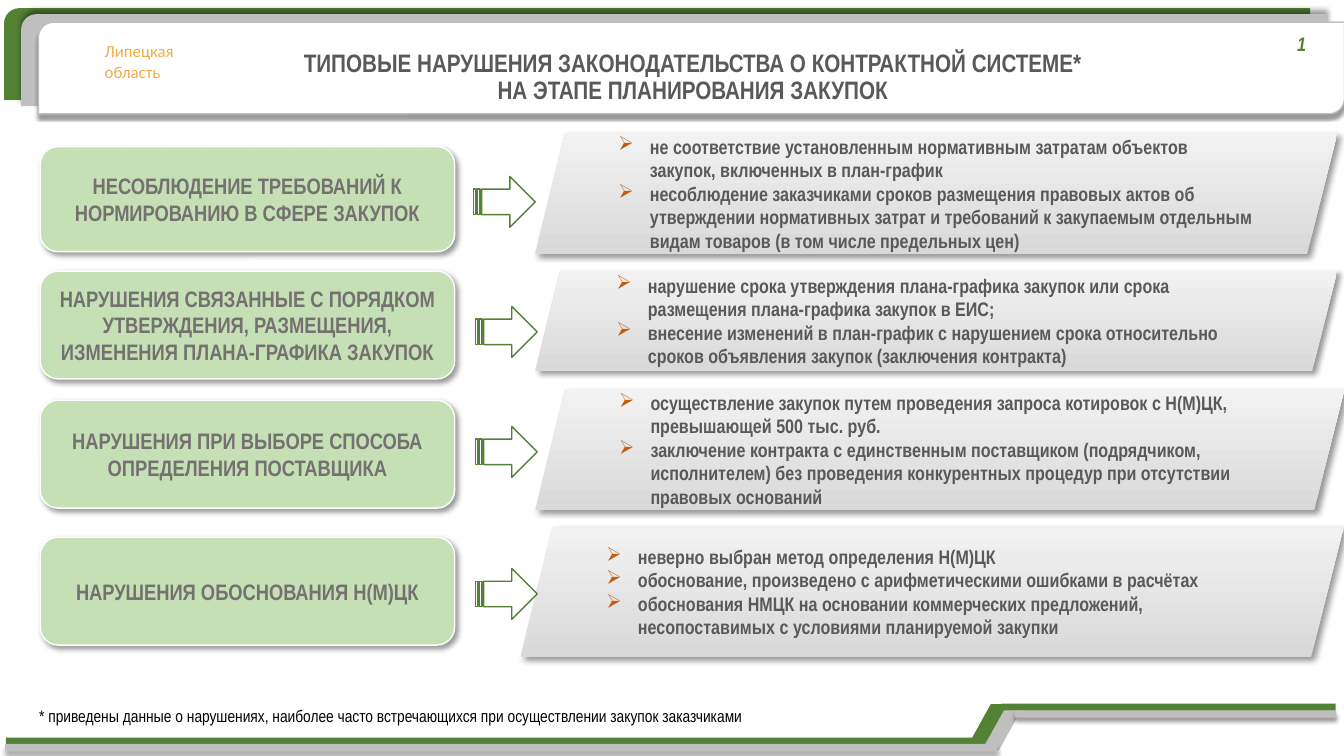
from dataclasses import dataclass, field
from typing import Any

from lxml import etree
from pptx import Presentation
from pptx import util as u
from pptx.dml.color import RGBColor
from pptx.enum import shapes, text
from pptx.oxml.ns import qn


@dataclass(frozen=True)
class Theme:
    green: str = "548235"
    silver: str = "BFBFBF"
    white: str = "FFFFFF"
    black: str = "000000"
    pale_green: str = "C5E0B4"
    orange: str = "F2AC44"
    bullet: str = "C55A11"
    ink: str = "595959"
    topic_ink: str = "767171"
    panel_bottom: str = "D9D9D9"
    panel_top: str = "F2F2F2"
    narrow: str = "Arial Narrow"
    plain: str = "Calibri"
    title_size: int = 18
    topic_size: int = 16
    body_size: int = 14
    small_size: int = 12


THEME = Theme()
KIND = shapes.MSO_SHAPE
ALIGN = text.PP_ALIGN
ANCHOR = text.MSO_ANCHOR
PANEL_INSET = 2.7
BULLET_INDENT = 22.5


@dataclass(frozen=True)
class Frame:
    left: float
    top: float
    width: float
    height: float

    def lengths(self) -> list[int]:
        return [u.Pt(v) for v in (self.left, self.top, self.width, self.height)]


@dataclass(frozen=True)
class Shadow:
    blur: float
    distance: float
    angle: int


@dataclass(frozen=True)
class Style:
    size: int
    color: str
    font: str = THEME.narrow
    bold: bool = False
    italic: bool = False


@dataclass(frozen=True)
class Layout:
    """Text frame and paragraph settings."""
    frame: dict[str, Any] = field(default_factory=dict)
    para: dict[str, Any] = field(default_factory=dict)
    bulleted: bool = False


@dataclass(frozen=True)
class Violation:
    topic: str
    topic_frame: Frame
    panel_frame: Frame
    arrow_left: float
    arrow_top: float
    details: tuple[str, ...]


CAST = Shadow(4, 3, 45)
VIOLATIONS = (
    Violation(
        "НЕСОБЛЮДЕНИЕ ТРЕБОВАНИЙ К НОРМИРОВАНИЮ В СФЕРЕ ЗАКУПОК",
        Frame(28.8, 104.8, 296, 75), Frame(382.3, 95, 573, 86.4), 338.4, 126,
        ("не соответствие установленным нормативным затратам объектов закупок, включенных в план-график",
         "несоблюдение заказчиками сроков размещения правовых актов об утверждении нормативных затрат "
         "и требований к закупаемым отдельным видам товаров (в том числе предельных цен)")),
    Violation(
        "НАРУШЕНИЯ СВЯЗАННЫЕ С ПОРЯДКОМ УТВЕРЖДЕНИЯ, РАЗМЕЩЕНИЯ, ИЗМЕНЕНИЯ ПЛАНА-ГРАФИКА ЗАКУПОК",
        Frame(28.8, 193.7, 296, 77), Frame(382.3, 193, 573, 72), 339.8, 218.9,
        ("нарушение срока утверждения плана-графика закупок или срока размещения плана-графика закупок в ЕИС;",
         "внесение изменений в план-график с нарушением срока относительно "
         "сроков объявления закупок (заключения контракта)")),
    Violation(
        "НАРУШЕНИЯ ПРИ ВЫБОРЕ СПОСОБА ОПРЕДЕЛЕНИЯ ПОСТАВЩИКА",
        Frame(28.8, 286, 296, 77), Frame(382.3, 277.9, 578, 86.4), 339.8, 304.6,
        ("осуществление закупок путем проведения запроса котировок с Н(М)ЦК, превышающей 500 тыс. руб.",
         "заключение контракта с единственным поставщиком (подрядчиком, исполнителем) "
         "без проведения конкурентных процедур при отсутствии правовых оснований")),
    Violation(
        "НАРУШЕНИЯ ОБОСНОВАНИЯ Н(М)ЦК",
        Frame(28.8, 383.8, 296, 77), Frame(371.8, 376.2, 588, 93), 339.8, 406.1,
        ("неверно выбран метод определения Н(М)ЦК",
         "обоснование, произведено с арифметическими ошибками в расчётах",
         "обоснования НМЦК на основании коммерческих предложений, "
         "несопоставимых с условиями планируемой закупки")),
)


def assign(target: Any, values: dict[str, Any]) -> None:
    for name, value in values.items():
        setattr(target, name, value)


def paint(shape: Any, fill: str | tuple[str, str], line: str | None = None,
          shadow: Shadow | None = None) -> None:
    shape.shadow.inherit = False
    if isinstance(fill, tuple):
        shape.fill.gradient()
        shape.fill.gradient_angle = 90
        for stop, color in zip(shape.fill.gradient_stops, fill):
            stop.color.rgb = RGBColor.from_string(color)
    else:
        shape.fill.solid()
        shape.fill.fore_color.rgb = RGBColor.from_string(fill)
    if line:
        shape.line.color.rgb = RGBColor.from_string(line)
        shape.line.width = u.Pt(1)
    else:
        shape.line.fill.background()
    if shadow:
        effects = shape._element.spPr.find(qn("a:effectLst"))
        outer = etree.SubElement(effects, qn("a:outerShdw"), blurRad=str(u.Pt(shadow.blur)),
                                 dist=str(u.Pt(shadow.distance)), dir=str(shadow.angle * 60000),
                                 algn="ctr", rotWithShape="0")
        color = etree.SubElement(outer, qn("a:srgbClr"), val=THEME.black)
        etree.SubElement(color, qn("a:alpha"), val="40000")


def add_block(page: Any, kind: Any, frame: Frame, fill: str | tuple[str, str],
              line: str | None = None, shadow: Shadow | None = None) -> Any:
    block = page.shapes.add_shape(kind, *frame.lengths())
    paint(block, fill, line, shadow)
    return block


def add_bullet(para: Any) -> None:
    props = para._p.get_or_add_pPr()
    props.set("marL", str(u.Pt(BULLET_INDENT)))
    props.set("indent", str(u.Pt(-BULLET_INDENT)))
    color = etree.SubElement(props, qn("a:buClr"))
    etree.SubElement(color, qn("a:srgbClr"), val=THEME.bullet)
    etree.SubElement(props, qn("a:buChar"), char="➢")


def write(box: Any, lines: tuple[str, ...], style: Style, layout: Layout = Layout()) -> None:
    frame = box.text_frame
    assign(frame, {"word_wrap": True, **layout.frame})
    for index, line in enumerate(lines):
        para = frame.add_paragraph() if index else frame.paragraphs[0]
        if layout.bulleted:
            add_bullet(para)
        assign(para, layout.para)
        span = para.add_run()
        span.text = line
        assign(span.font, {"size": u.Pt(style.size), "name": style.font,
                           "bold": style.bold, "italic": style.italic})
        span.font.color.rgb = RGBColor.from_string(style.color)


def add_label(page: Any, frame: Frame, lines: tuple[str, ...], style: Style,
              layout: Layout = Layout()) -> None:
    write(page.shapes.add_textbox(*frame.lengths()), lines, style, layout)


def add_slant(page: Any, left: float, top: float, color: str) -> None:
    corners = [(left + dx, top + dy) for dx, dy in ((0, 28.4), (15.8, 0), (28, 0), (12.2, 28.4))]
    points = [(u.Pt(x), u.Pt(y)) for x, y in corners]
    builder = page.shapes.build_freeform(*points[0], scale=1.0)
    builder.add_line_segments(points[1:], close=True)
    paint(builder.convert_to_shape(), color)


def add_decor(page: Any) -> None:
    # Header plates
    for left, top, fill, line, shadow in (
            (2.9, 5.8, THEME.green, None, None),
            (15.1, 10.1, THEME.silver, None, Shadow(4, 3, 270)),
            (27.4, 15.8, THEME.white, THEME.silver, Shadow(2, 3, 90))):
        add_block(page, KIND.ROUND_2_DIAG_RECTANGLE, Frame(left, top, 933, 65.5), fill, line, shadow)
    # Footer ribbons
    for slant, low, high, color, shadow in (
            ((692, 502.9), (4.3, 527, 700), (715.7, 502.6, 238.3), THEME.green, None),
            ((701.3, 507.6), (3.6, 531.4, 708.5), (725, 507.6, 229.7), THEME.silver, Shadow(3, 3, 90))):
        add_slant(page, *slant, color)
        for left, top, width in (low, high):
            add_block(page, KIND.RECTANGLE, Frame(left, top, width, 5), color, None, shadow)


def add_violation(page: Any, item: Violation) -> None:
    topic = add_block(page, KIND.ROUNDED_RECTANGLE, item.topic_frame, THEME.pale_green, THEME.white, CAST)
    write(topic, (item.topic,), Style(THEME.topic_size, THEME.topic_ink, bold=True),
          Layout({"vertical_anchor": ANCHOR.MIDDLE}, {"alignment": ALIGN.CENTER}))
    panel = add_block(page, KIND.PARALLELOGRAM, item.panel_frame,
                      (THEME.panel_bottom, THEME.panel_top), None, CAST)
    margins = {f"margin_{side}": u.Pt(PANEL_INSET) for side in ("left", "top", "right", "bottom")}
    write(panel, item.details, Style(THEME.body_size, THEME.ink, bold=True),
          Layout({"vertical_anchor": ANCHOR.MIDDLE, **margins}, {"alignment": ALIGN.LEFT}, True))
    add_block(page, KIND.STRIPED_RIGHT_ARROW, Frame(item.arrow_left, item.arrow_top, 44, 36.4),
              THEME.white, THEME.green)


def main() -> None:
    deck = Presentation()
    assign(deck, {"slide_width": u.Pt(960), "slide_height": u.Pt(540)})
    page = deck.slides.add_slide(deck.slide_layouts[6])
    add_decor(page)
    # Region, title, footnote and page number
    add_label(page, Frame(67.7, 25.9, 65.5, 36), ("Липецкая", "область"),
              Style(THEME.small_size, THEME.orange, THEME.plain))
    flush = {f"margin_{side}": 0 for side in ("left", "top", "right", "bottom")}
    add_label(page, Frame(127.4, 43.2, 735, 31.7),
              ("ТИПОВЫЕ НАРУШЕНИЯ ЗАКОНОДАТЕЛЬСТВА О КОНТРАКТНОЙ СИСТЕМЕ*", "НА ЭТАПЕ ПЛАНИРОВАНИЯ ЗАКУПОК"),
              Style(THEME.title_size, THEME.ink, bold=True),
              Layout({"vertical_anchor": ANCHOR.BOTTOM, **flush},
                     {"alignment": ALIGN.CENTER, "line_spacing": 0.9}))
    add_label(page, Frame(20.9, 500.4, 934, 21.6),
              ("* приведены данные о нарушениях, наиболее часто встречающихся при осуществлении закупок заказчиками",),
              Style(THEME.small_size, THEME.black))
    add_label(page, Frame(919.4, 19.4, 20.9, 24.5), ("1",),
              Style(THEME.body_size, THEME.green, bold=True, italic=True), Layout({"word_wrap": False}))
    # Violations with their details
    for item in VIOLATIONS:
        add_violation(page, item)
    deck.save("out.pptx")


if __name__ == "__main__":
    main()
